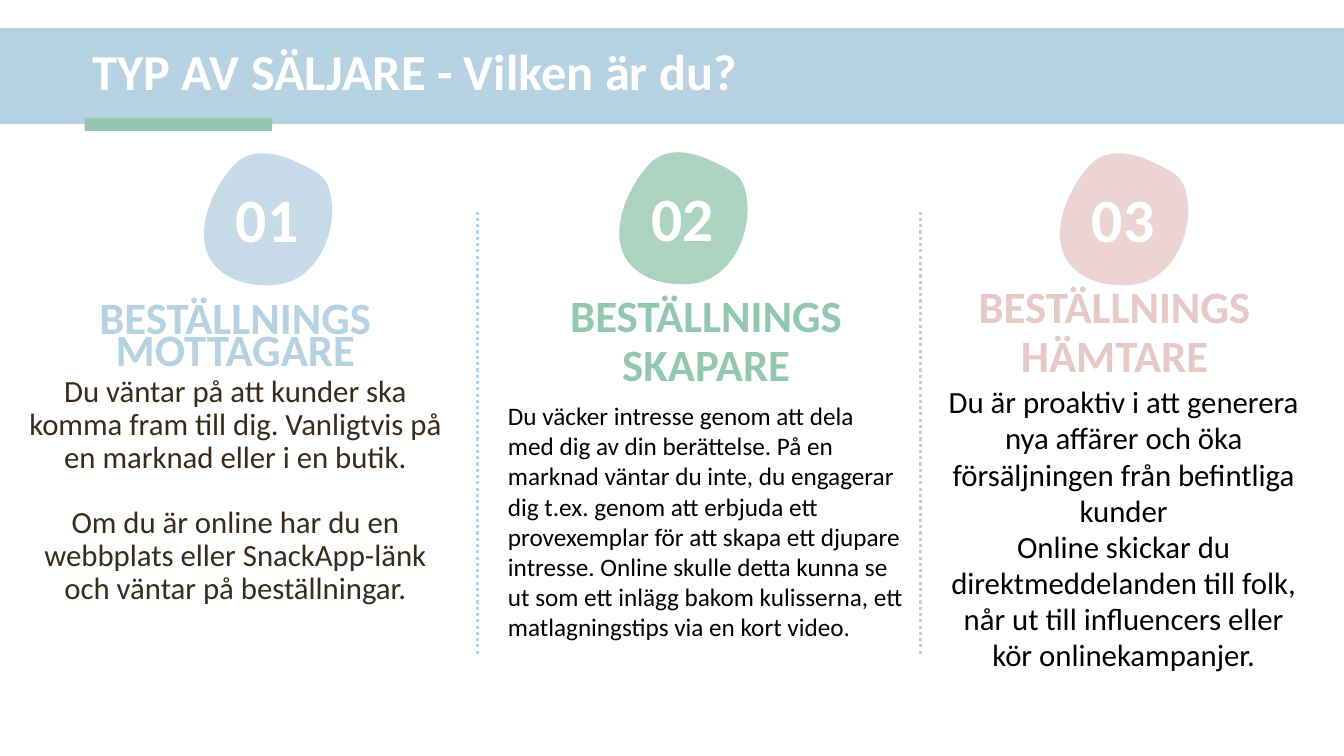
"""Build the slide about three types of sellers."""
from dataclasses import dataclass

import lxml.etree
import pptx
import pptx.dml.color
import pptx.enum.dml
import pptx.enum.shapes
import pptx.enum.text
import pptx.oxml.ns
import pptx.util

Inches = pptx.util.Inches
Pt = pptx.util.Pt
qn = pptx.oxml.ns.qn
Align = pptx.enum.text.PP_ALIGN
Anchor = pptx.enum.text.MSO_ANCHOR
Point = tuple[float, float]
Box = tuple[float, float, float, float]


@dataclass(frozen=True)
class Theme:
    font: str = "Calibri"
    blue: str = "B6D1E1"
    green: str = "94C7B0"
    pink: str = "E6C8C7"
    white: str = "FFFFFF"
    black: str = "000000"
    brown: str = "382B1B"
    title_size: int = 36
    number_size: int = 44
    heading_size: int = 32
    body_size: int = 22
    small_size: int = 18
    blob_opacity: int = 77


THEME = Theme()


@dataclass(frozen=True)
class Passage:
    text: str
    size: int
    color: str
    bold: bool = False
    align: Align = Align.CENTER
    spacing: float | Pt | None = None
    before: float = 0


@dataclass(frozen=True)
class TextBlock:
    box: Box
    passages: tuple[Passage, ...]
    anchor: Anchor = Anchor.TOP


@dataclass(frozen=True)
class Seller:
    number: str
    color: str
    blob_at: Point
    blocks: tuple[TextBlock, ...]


TIGHT = Pt(23.4)
LOOSE = Pt(25.8)
NUMBER_DROP = 0.63
BLOB_SIZE = (1.27, 1.31)
BLOB_START = (0.77, 0.03)
BLOB_CURVES = (
    ((0.60, -0.02), (0.42, -0.02), (0.29, 0.13)),
    ((0.16, 0.27), (0.03, 0.51), (0.01, 0.71)),
    ((-0.06, 1.16), (0.35, 1.36), (0.76, 1.30)),
    ((1.16, 1.23), (1.36, 0.71), (1.24, 0.34)),
    ((1.20, 0.22), (1.09, 0.17), (0.99, 0.12)),
    ((0.92, 0.09), (0.85, 0.05), (0.77, 0.03)),
)
DIVIDERS_X = (4.74, 9.13)
DIVIDER_TOP, DIVIDER_BOTTOM = 2.1, 6.49


def heading(text: str, color: str, spacing: float | Pt = 0.9) -> Passage:
    """Describe a bold column heading."""
    return Passage(text, THEME.heading_size, color, True, spacing=spacing)


def body(text: str, color: str, spacing: Pt, before: float = 0) -> Passage:
    """Describe a centred body paragraph."""
    return Passage(text, THEME.body_size, color, spacing=spacing, before=before)


TITLE = TextBlock(
    (0.82, 0.34, 11.93, 0.79),
    (Passage("TYP AV SÄLJARE - Vilken är du?", THEME.title_size, THEME.white, True,
             Align.LEFT, 0.9),),
    Anchor.MIDDLE,
)
SELLERS = (
    Seller("01", THEME.blue, (2.02, 1.52), (
        TextBlock((0.15, 3.03, 4.37, 1.14), (
            heading("BESTÄLLNINGS\vMOTTAGARE", THEME.blue, TIGHT),
            body("Du väntar på att kunder ska komma fram till dig. Vanligtvis på en "
                 "marknad eller i en butik.", THEME.brown, TIGHT),
            body("Om du är online har du en webbplats eller SnackApp-länk och väntar "
                 "på beställningar.", THEME.brown, TIGHT, 23.4),
        )),
    )),
    Seller("02", THEME.green, (6.14, 1.51), (
        TextBlock((4.94, 2.87, 4.13, 1.14), (heading("BESTÄLLNINGS\vSKAPARE", THEME.green),)),
        TextBlock((4.94, 3.92, 4.13, 2.52), (
            Passage("Du väcker intresse genom att dela med dig av din berättelse. På en "
                    "marknad väntar du inte, du engagerar dig t.ex. genom att erbjuda ett "
                    "provexemplar för att skapa ett djupare intresse. Online skulle detta "
                    "kunna se ut som ett inlägg bakom kulisserna, ett matlagningstips via "
                    "en kort video.", THEME.small_size, THEME.black, align=Align.LEFT),
        )),
    )),
    Seller("03", THEME.pink, (10.51, 1.52), (
        TextBlock((9.19, 2.78, 3.73, 1.14), (heading("BESTÄLLNINGS\vHÄMTARE", THEME.pink),)),
        TextBlock((9.28, 3.76, 3.73, 1.54), (
            body("Du är proaktiv i att generera nya affärer och öka försäljningen från "
                 "befintliga kunder", THEME.black, LOOSE),
            body("Online skickar du direktmeddelanden till folk, når ut till influencers "
                 "eller kör onlinekampanjer.", THEME.black, LOOSE),
        )),
    )),
)


def rgb(color: str) -> pptx.dml.color.RGBColor:
    """Convert a hex string to a colour."""
    return pptx.dml.color.RGBColor.from_string(color)


def paint(shape, color: str) -> None:
    """Give a shape a flat fill without outline or shadow."""
    shape.shadow.inherit = False
    shape.fill.solid()
    shape.fill.fore_color.rgb = rgb(color)
    shape.line.fill.background()


def add_bar(slide, box: Box, color: str) -> None:
    """Draw a plain rectangle."""
    bar = slide.shapes.add_shape(
        pptx.enum.shapes.MSO_SHAPE.RECTANGLE, *map(Inches, box))
    paint(bar, color)


def add_text(slide, block: TextBlock) -> None:
    """Draw a text box with its formatted paragraphs."""
    frame = slide.shapes.add_textbox(*map(Inches, block.box)).text_frame
    frame.word_wrap = True
    frame.vertical_anchor = block.anchor
    for index, passage in enumerate(block.passages):
        paragraph = frame.add_paragraph() if index else frame.paragraphs[0]
        paragraph.text = passage.text
        paragraph.alignment = passage.align
        if passage.spacing is not None:
            paragraph.line_spacing = passage.spacing
        if passage.before:
            paragraph.space_before = Pt(passage.before)
        for run in paragraph.runs:
            run.font.name = THEME.font
            run.font.size = Pt(passage.size)
            run.font.bold = passage.bold
            run.font.color.rgb = rgb(passage.color)


def add_blob(slide, at: Point, color: str) -> None:
    """Draw a translucent blob with a curved outline."""
    builder = slide.shapes.build_freeform(*map(Inches, BLOB_START))
    builder.add_line_segments([tuple(map(Inches, curve[-1])) for curve in BLOB_CURVES])
    blob = builder.convert_to_shape()
    blob.left, blob.top = map(Inches, at)
    blob.width, blob.height = map(Inches, BLOB_SIZE)
    paint(blob, color)
    outline = blob._element.find(".//" + qn("a:path"))
    for side, length in zip("wh", BLOB_SIZE):
        outline.set(side, str(Inches(length)))
    for step in list(outline):
        outline.remove(step)
    strokes = [("a:moveTo", (BLOB_START,))]
    strokes += [("a:cubicBezTo", curve) for curve in BLOB_CURVES]
    for tag, points in strokes:
        stroke = lxml.etree.SubElement(outline, qn(tag))
        for x, y in points:
            lxml.etree.SubElement(stroke, qn("a:pt"), x=str(Inches(x)), y=str(Inches(y)))
    lxml.etree.SubElement(outline, qn("a:close"))
    tint = blob._element.spPr.find(".//" + qn("a:srgbClr"))
    lxml.etree.SubElement(tint, qn("a:alpha"), val=str(THEME.blob_opacity * 1000))


def add_seller(slide, seller: Seller) -> None:
    """Draw one seller's blob, number and texts."""
    left, top = seller.blob_at
    add_blob(slide, seller.blob_at, seller.color)
    number = Passage(seller.number, THEME.number_size, THEME.white, True, spacing=TIGHT)
    add_text(slide, TextBlock((left, top + NUMBER_DROP, 1.26, 1.05), (number,)))
    for block in seller.blocks:
        add_text(slide, block)


def add_divider(slide, x: float) -> None:
    """Draw a dotted vertical divider."""
    divider = slide.shapes.add_connector(
        pptx.enum.shapes.MSO_CONNECTOR.STRAIGHT,
        Inches(x), Inches(DIVIDER_TOP), Inches(x), Inches(DIVIDER_BOTTOM))
    divider.line.color.rgb = rgb(THEME.blue)
    divider.line.width = Pt(2.25)
    divider.line.dash_style = pptx.enum.dml.MSO_LINE.ROUND_DOT
    lxml.etree.SubElement(divider._element.spPr, qn("a:effectLst"))


def main() -> None:
    """Assemble and save the slide."""
    deck = pptx.Presentation()
    deck.slide_width, deck.slide_height = Inches(13.33), Inches(7.5)
    slide = deck.slides.add_slide(deck.slide_layouts[6])
    add_bar(slide, (0, 0.28, 13.33, 0.95), THEME.blue)
    add_bar(slide, (0.84, 1.17, 1.86, 0.13), THEME.green)
    add_text(slide, TITLE)
    for x in DIVIDERS_X:
        add_divider(slide, x)
    for seller in SELLERS:
        add_seller(slide, seller)
    deck.save("out.pptx")


if __name__ == "__main__":
    main()
